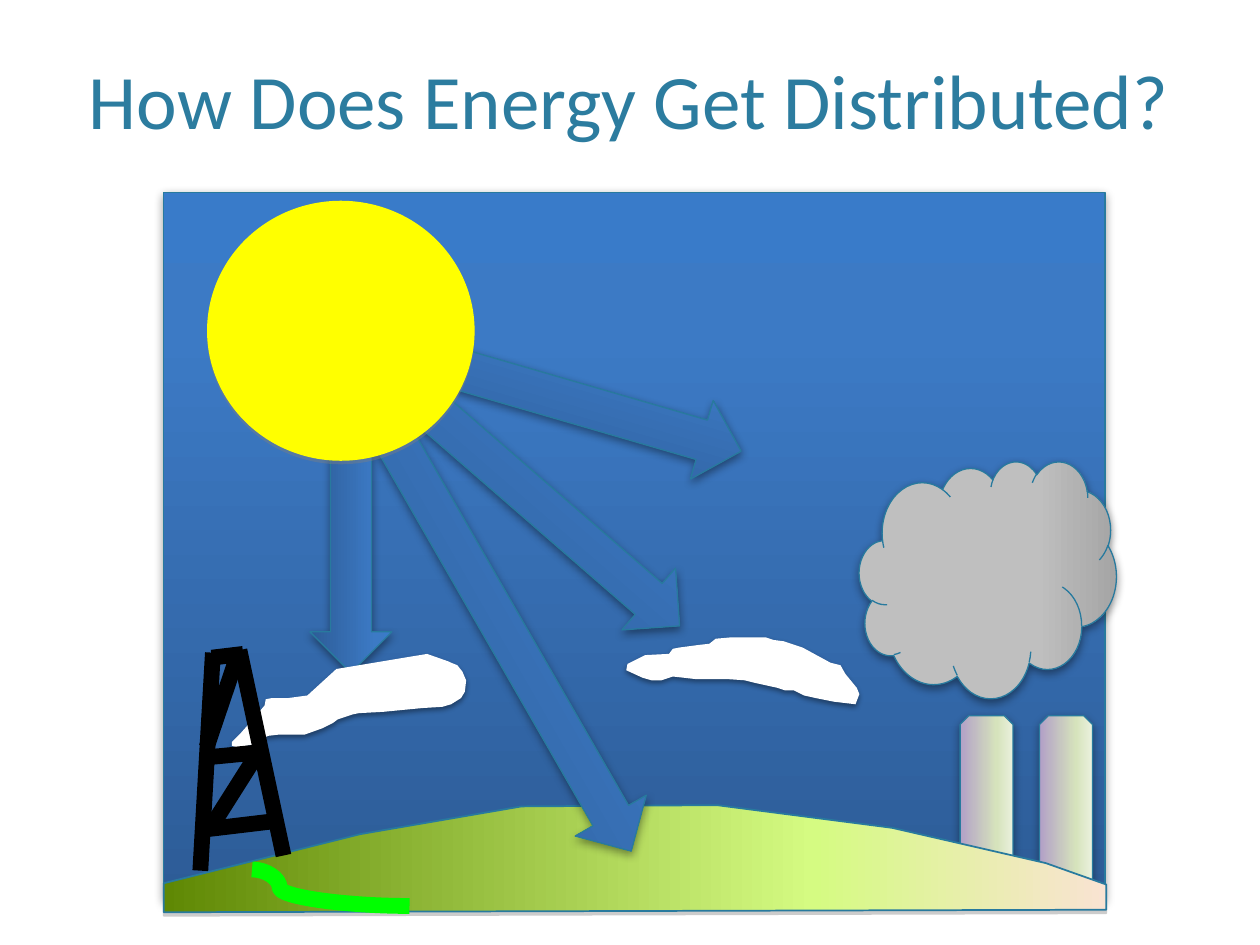
from lxml import etree
from pptx import Presentation
from pptx.dml.color import RGBColor
from pptx.enum.shapes import MSO_CONNECTOR, MSO_SHAPE
from pptx.enum.text import MSO_ANCHOR, PP_ALIGN
from pptx.oxml.ns import qn
from pptx.util import Emu, Pt

PX = 9144  # 100 px to the inch
RECT, OVAL = MSO_SHAPE.RECTANGLE, MSO_SHAPE.OVAL
ARROW, CLOUD = MSO_SHAPE.RIGHT_ARROW, MSO_SHAPE.CLOUD
STACK = MSO_SHAPE.SNIP_2_SAME_RECTANGLE
STRAIGHT, CURVE = MSO_CONNECTOR.STRAIGHT, MSO_CONNECTOR.CURVE

TITLE = "How Does Energy Get Distributed?"
EDGE = "287A9E"
# Gradients: stops of (percent, colour), then angle
BLUE = [(0, "2D5C97"), (80, "3C7AC5"), (100, "397BC9")], 90
TOWER = [(0, "B2A0C7"), (69, "D6E3BC"), (100, "EAF1DD")], 0
GRASS = [(0, "5F8804"), (69, "D5FB82"), (100, "F9E3D2")], 0
SMOKE = [(0, "BFBFBF"), (69, "BFBFBF"), (100, "A5A5A5")], 0
# Shadows: colour, opacity in percent, blur and distance in points
SOFT = "000000", 40, 5, 2
HARD = "808080", 40, 0, 2
FAINT = "000000", 38, 3.1, 1.6

SKY = (130, 153, 747, 560)
SUN = (165, 160, 211, 205)
PUFF = (682, 366, 204, 188)
STACKS = [(762, 568, 42, 131), (825, 568, 42, 131)]
RAY_H = 65
RAYS = [  # left, top, length, turn
    (352, 292, 241, 16.2),
    (306, 377, 266, 41),
    (214, 477, 383, 60.1),
    (178, 401, 201, 90),
]
HILL = [(130, 701), (286, 662), (414, 640), (569, 639), (708, 657),
        (830, 685), (878, 702), (878, 722), (130, 724)]
EAST = [(554, 512), (539, 514), (534, 515), (531, 519), (512, 520),
        (506, 523), (498, 527), (497, 532), (510, 538), (517, 540),
        (525, 540), (534, 537), (552, 539), (577, 539), (591, 540),
        (599, 542), (617, 546), (623, 548), (630, 548), (638, 552),
        (647, 554), (662, 557), (679, 559), (682, 551), (680, 546),
        (671, 535), (667, 528), (659, 526), (637, 514), (622, 509),
        (614, 508), (608, 506), (579, 506), (568, 507), (563, 511)]
WEST = [(267, 531), (244, 552), (229, 554), (216, 554), (211, 555),
        (210, 560), (198, 574), (191, 582), (184, 589), (184, 592),
        (188, 593), (201, 591), (204, 588), (213, 584), (222, 583),
        (242, 583), (256, 578), (264, 574), (268, 571), (280, 567),
        (285, 566), (304, 565), (335, 562), (351, 561), (358, 559),
        (366, 554), (369, 549), (370, 540), (367, 533), (363, 528),
        (358, 526), (356, 525), (339, 519)]
DERRICK = [
    (159, 691, 169, 518), (190, 516, 225, 679), (168, 522, 193, 519),
    (165, 601, 207, 597), (157, 659, 224, 651), (169, 654, 207, 594),
    (164, 593, 187, 525),
]
PIPE, BEND = (200, 690, 325, 719), 17600


def px(*nums):
    return [Emu(n * PX) for n in nums]


def rgb(code):
    return RGBColor.from_string(code)


def paint(item, fill, edge, width, shade):
    """Set the fill (hex or gradient), outline and downward shadow."""
    if isinstance(fill, str):
        item.fill.solid()
        item.fill.fore_color.rgb = rgb(fill)
    else:
        stops, angle = fill
        item.fill.gradient()
        item.fill.gradient_angle = angle
        group = item._element.spPr.find(".//" + qn("a:gsLst"))
        group.clear()
        for spot, code in stops:
            stop = etree.SubElement(group, qn("a:gs"), pos=str(spot * 1000))
            etree.SubElement(stop, qn("a:srgbClr"), val=code)
    if edge:
        item.line.color.rgb = rgb(edge)
        item.line.width = Pt(width)
    else:
        item.line.fill.background()
    item.shadow.inherit = False
    code, alpha, blur, dist = shade
    outer = etree.SubElement(
        item._element.spPr.find(qn("a:effectLst")), qn("a:outerShdw"),
        blurRad=str(Pt(blur)), dist=str(Pt(dist)), dir="5400000",
        algn="ctr", rotWithShape="0")
    color = etree.SubElement(outer, qn("a:srgbClr"), val=code)
    etree.SubElement(color, qn("a:alpha"), val=str(alpha * 1000))


def shape(kind, box, fill, edge=EDGE, width=0.75, shade=SOFT, turn=0):
    item = shapes.add_shape(kind, *px(*box))
    item.rotation = turn
    paint(item, fill, edge, width, shade)


def outline(points, fill, edge=None, width=1, shade=FAINT):
    path = shapes.build_freeform(*points[0], scale=PX)
    path.add_line_segments(points[1:], close=True)
    paint(path.convert_to_shape(), fill, edge, width, shade)


def line(ends, code, kind=STRAIGHT, bend=None):
    item = shapes.add_connector(kind, *px(*ends))
    item.line.color.rgb = rgb(code)
    item.line.width = Pt(9)
    props = item._element.spPr
    etree.SubElement(props, qn("a:effectLst"))
    if bend:
        guides = props.find(".//" + qn("a:avLst"))
        etree.SubElement(guides, qn("a:gd"), name="adj1", fmla=f"val {bend}")


def text(words, box, size, code, font="Calibri"):
    frame = shapes.add_textbox(*px(*box)).text_frame
    frame.word_wrap = True
    frame.vertical_anchor = MSO_ANCHOR.BOTTOM
    para = frame.paragraphs[0]
    para.alignment = PP_ALIGN.CENTER
    run = para.add_run()
    run.text = words
    run.font.name, run.font.size = font, Pt(size)
    run.font.color.rgb = rgb(code)


deck = Presentation()
deck.slide_width, deck.slide_height = px(1000, 750)
shapes = deck.slides.add_slide(deck.slide_layouts[6]).shapes

shape(RECT, SKY, BLUE)
for box in STACKS:
    shape(STACK, box, TOWER)
text(TITLE, (60, -5, 879, 125), size=44, code="2C7C9F")
outline(EAST, "FFFFFF")
for spot, (left, top, length, turn) in enumerate(RAYS):
    if spot == 1:  # the first ray lies behind the hill
        outline(HILL, GRASS, edge=EDGE, shade=HARD)
    shape(ARROW, (left, top, length, RAY_H), BLUE, turn=turn)
shape(OVAL, SUN, "FFFF00", edge="FFFF00", width=1, shade=HARD)
outline(WEST, "FFFFFF")
shape(CLOUD, PUFF, SMOKE)
for ends in DERRICK:
    line(ends, "000000")
line(PIPE, "00FF00", kind=CURVE, bend=BEND)

deck.save("out.pptx")
